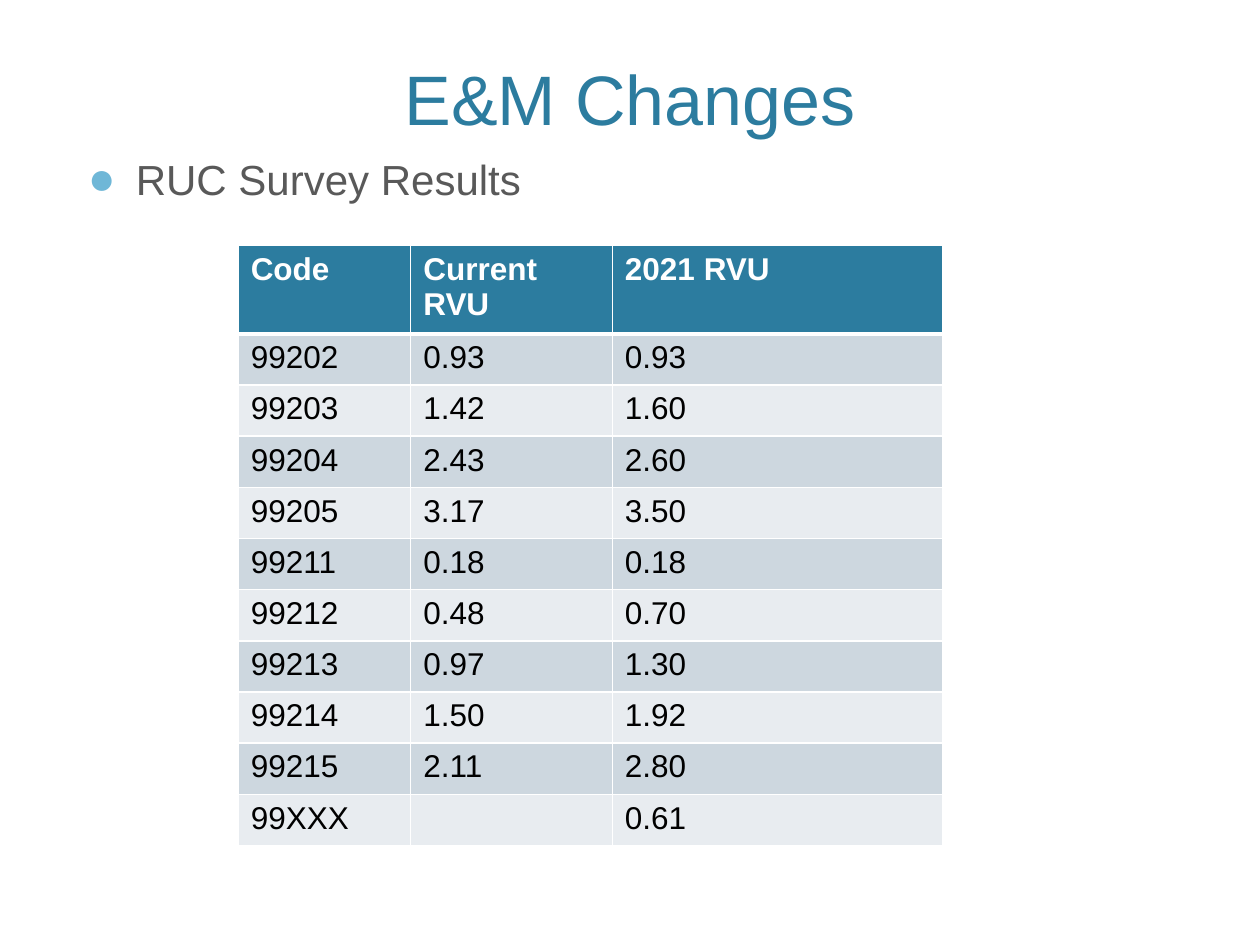
from lxml import etree
from pptx import Presentation
from pptx import util as u
from pptx.dml.color import RGBColor
from pptx.enum import text
from pptx.oxml.ns import qn

TEAL = RGBColor(0x2C, 0x7C, 0x9F)
SKY = RGBColor(0x6F, 0xB7, 0xD7)
GREY = RGBColor(0x59, 0x59, 0x59)
BLACK = RGBColor(0, 0, 0)
WHITE = RGBColor(0xFF, 0xFF, 0xFF)
BANDS = [RGBColor(0xCD, 0xD7, 0xDF), RGBColor(0xE8, 0xEC, 0xF0)]

ROWS = [
    ("Code", "Current RVU", "2021 RVU"),
    ("99202", "0.93", "0.93"),
    ("99203", "1.42", "1.60"),
    ("99204", "2.43", "2.60"),
    ("99205", "3.17", "3.50"),
    ("99211", "0.18", "0.18"),
    ("99212", "0.48", "0.70"),
    ("99213", "0.97", "1.30"),
    ("99214", "1.50", "1.92"),
    ("99215", "2.11", "2.80"),
    ("99XXX", "", "0.61"),
]
COLUMN_WIDTHS = [1.37, 1.6, 2.62]
HEADER_HEIGHT, ROW_HEIGHT = 0.65, 0.406


def style_font(font, size, color, bold=False):
    font.name = "Arial"
    font.size = u.Pt(size)
    font.bold = bold
    font.color.rgb = color


def add_borders(cell, bottom_width):
    properties = cell._tc.get_or_add_tcPr()
    # Border lines come before the fill in the cell properties
    for index, (side, width) in enumerate(
            [("lnL", 1), ("lnR", 1), ("lnT", 1), ("lnB", bottom_width)]):
        line = etree.Element(qn(f"a:{side}"), w=str(u.Pt(width)))
        fill = etree.SubElement(line, qn("a:solidFill"))
        etree.SubElement(fill, qn("a:srgbClr"), val=str(WHITE))
        properties.insert(index, line)


presentation = Presentation()
presentation.slide_width, presentation.slide_height = u.Inches(10), u.Inches(7.5)
slide = presentation.slides.add_slide(presentation.slide_layouts[5])
margin = int(presentation.slide_width * 0.06)
content_width = presentation.slide_width - 2 * margin

# Title
title = slide.shapes.title
title.left, title.top = margin, u.Inches(0.12)
title.width, title.height = content_width, u.Inches(1.04)
title.text_frame.text = "E&M Changes"
title.text_frame.vertical_anchor = text.MSO_ANCHOR.BOTTOM
title.text_frame.paragraphs[0].alignment = text.PP_ALIGN.CENTER
style_font(title.text_frame.paragraphs[0].runs[0].font, 40, TEAL)

# Bulleted line
body = slide.shapes.add_textbox(margin, u.Inches(1.17), content_width, u.Inches(0.6))
body.text_frame.word_wrap = True
paragraph = body.text_frame.paragraphs[0]
paragraph.text = "RUC Survey Results"
properties = paragraph._p.get_or_add_pPr()
indent = u.Inches(0.38)
properties.set("marL", str(indent))
properties.set("indent", str(-indent))
bullet_color = etree.SubElement(properties, qn("a:buClr"))
etree.SubElement(bullet_color, qn("a:srgbClr"), val=str(SKY))
etree.SubElement(properties, qn("a:buSzPct"), val="110000")
etree.SubElement(properties, qn("a:buFont"), typeface="Arial")
etree.SubElement(properties, qn("a:buChar"), char="●")
style_font(paragraph.runs[0].font, 24, GREY)

# Table of RVU values
table_height = HEADER_HEIGHT + ROW_HEIGHT * (len(ROWS) - 1)
table = slide.shapes.add_table(
    len(ROWS), len(COLUMN_WIDTHS), u.Inches(1.89), u.Inches(1.95),
    u.Inches(sum(COLUMN_WIDTHS)), u.Inches(table_height)).table
for column, width in zip(table.columns, COLUMN_WIDTHS):
    column.width = u.Inches(width)
for row_index, values in enumerate(ROWS):
    header = row_index == 0
    table.rows[row_index].height = u.Inches(HEADER_HEIGHT if header else ROW_HEIGHT)
    for column_index, value in enumerate(values):
        cell = table.cell(row_index, column_index)
        cell.fill.solid()
        cell.fill.fore_color.rgb = TEAL if header else BANDS[(row_index - 1) % 2]
        add_borders(cell, 3 if header else 1)
        paragraph = cell.text_frame.paragraphs[0]
        paragraph.text = value
        style_font(paragraph.font, 18, WHITE if header else BLACK, header)
        for run in paragraph.runs:
            style_font(run.font, 18, WHITE if header else BLACK, header)

presentation.save("out.pptx")
